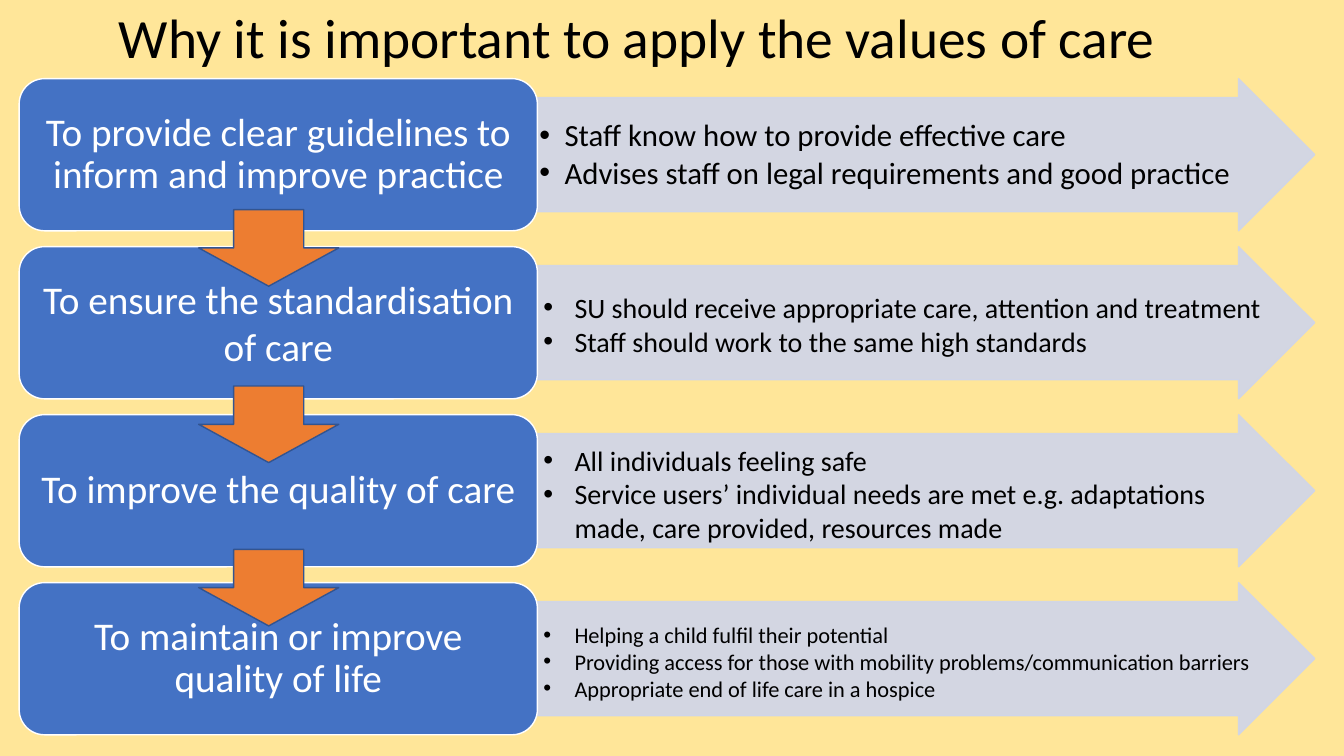
"""Builds a slide on why the values of care should be applied."""
import pptx
import pptx.dml.color
import pptx.enum.shapes
import pptx.enum.text
import pptx.oxml
import pptx.oxml.ns
import pptx.util
from pptx.util import Inches

TITLE = "Why it is important to apply the values of care"

REASONS = [
    {"label": "To provide clear guidelines to inform and improve practice",
     "label_spacing": 0.9,
     "facts": ["Staff know how to provide effective care",
               "Advises staff on legal requirements and good practice"],
     "at": (5.33, 0.97, 7.14, 1.14), "size": 22, "indent": 0.25,
     "insets": (0.02, 0.02), "spacing": 0.9, "after": 3.3},
    {"label": "To ensure the standardisation of care",
     "label_spacing": 1.0,
     "facts": ["SU should receive appropriate care, attention and treatment",
               "Staff should work to the same high standards"],
     "at": (5.29, 2.83, 7.4, 0.77), "size": 20},
    {"label": "To improve the quality of care",
     "label_spacing": 0.9,
     "facts": ["All individuals feeling safe",
               "Service users’ individual needs are met e.g. adaptations made, "
               "care provided, resources made"],
     "at": (5.29, 4.34, 7.4, 1.11), "size": 20},
    {"label": "To maintain or improve quality of life",
     "label_spacing": 0.9,
     "facts": ["Helping a child fulfil their potential",
               "Providing access for those with mobility problems/communication barriers",
               "Appropriate end of life care in a hospice"],
     "at": (5.29, 6.09, 7.4, 0.94), "size": 16},
]

STEP_ARROW_TOPS = [2.08, 3.83, 5.45]

THEME = {
    "font": "Calibri", "title_size": 39.6, "label_size": 28,
    "background": "FFE699", "text": "000000", "label_text": "FFFFFF",
    "label": "4472C4", "label_line": "FFFFFF", "band": "CFD5EA",
    "step": "ED7D31", "step_line": "325491", "band_opacity": 90,
}

ROW_TOP, ROW_PITCH, ROW_HEIGHT = 0.78, 5 / 3, 1.51
LABEL_LEFT, LABEL_WIDTH, BAND_WIDTH = 0.19, 5.14, 7.71
BAND_LEFT = LABEL_LEFT + LABEL_WIDTH

SHAPES = pptx.enum.shapes.MSO_SHAPE
ALIGN = pptx.enum.text.PP_ALIGN
ANCHOR = pptx.enum.text.MSO_ANCHOR


def color(name):
    return pptx.dml.color.RGBColor.from_string(THEME[name])


def add_block(page, kind, at, fill, line):
    block = page.shapes.add_shape(kind, *map(Inches, at))
    block.shadow.inherit = False
    block.fill.solid()
    block.fill.fore_color.rgb = color(fill)
    block.line.color.rgb = color(line)
    block.line.width = pptx.util.Pt(1)
    return block


def set_opacity(block, percent):
    for rgb in block.element.spPr.iter(pptx.oxml.ns.qn("a:srgbClr")):
        alpha = pptx.oxml.parse_xml(
            f'<a:alpha {pptx.oxml.ns.nsdecls("a")} val="{percent * 1000}"/>')
        rgb.append(alpha)


def set_bullet(para, indent):
    properties = para._p.get_or_add_pPr()
    properties.set("marL", str(Inches(indent)))
    properties.set("indent", str(-Inches(indent)))
    for tag, attribute, value in (("buFont", "typeface", "Arial"), ("buChar", "char", "•")):
        properties.append(pptx.oxml.parse_xml(
            f'<a:{tag} {pptx.oxml.ns.nsdecls("a")} {attribute}="{value}"/>'))


def write(box, lines, size, ink, align=ALIGN.LEFT, insets=(0.1, 0.05),
          spacing=1.0, after=0, indent=None, anchor=ANCHOR.MIDDLE):
    frame = box.text_frame
    frame.word_wrap = True
    frame.vertical_anchor = anchor
    frame.margin_left = frame.margin_right = Inches(insets[0])
    frame.margin_top = frame.margin_bottom = Inches(insets[1])
    for index, line in enumerate(lines):
        para = frame.paragraphs[0] if index == 0 else frame.add_paragraph()
        para.alignment = align
        para.line_spacing = spacing
        para.space_after = pptx.util.Pt(after)
        if indent:
            set_bullet(para, indent)
        span = para.add_run()
        span.text = line
        span.font.name = THEME["font"]
        span.font.size = pptx.util.Pt(size)
        span.font.color.rgb = color(ink)


def add_reason(page, index, reason):
    top = ROW_TOP + index * ROW_PITCH
    band = add_block(page, SHAPES.RIGHT_ARROW,
                     (BAND_LEFT, top, BAND_WIDTH, ROW_HEIGHT), "band", "band")
    band.adjustments[0] = 0.75
    band.adjustments[1] = 0.5
    set_opacity(band, THEME["band_opacity"])

    label = add_block(page, SHAPES.ROUNDED_RECTANGLE,
                      (LABEL_LEFT, top, LABEL_WIDTH, ROW_HEIGHT), "label", "label_line")
    write(label, [reason["label"]], THEME["label_size"], "label_text", ALIGN.CENTER,
          insets=(0.12, 0.06), spacing=reason["label_spacing"])

    facts = page.shapes.add_textbox(*map(Inches, reason["at"]))
    write(facts, reason["facts"], reason["size"], "text",
          insets=reason.get("insets", (0.1, 0.05)),
          spacing=reason.get("spacing", 1.0), after=reason.get("after", 0),
          indent=reason.get("indent", 0.31))


def main():
    deck = pptx.Presentation()
    deck.slide_width, deck.slide_height = Inches(13.33), Inches(7.5)
    page = deck.slides.add_slide(deck.slide_layouts[6])
    page.background.fill.solid()
    page.background.fill.fore_color.rgb = color("background")

    title = page.shapes.add_textbox(*map(Inches, (1.08, 0.21, 11.5, 0.39)))
    write(title, [TITLE], THEME["title_size"], "text", spacing=0.9)
    for index, reason in enumerate(REASONS):
        add_reason(page, index, reason)
    for top in STEP_ARROW_TOPS:
        add_block(page, SHAPES.DOWN_ARROW, (1.97, top, 1.39, 0.76), "step", "step_line")
    deck.save("out.pptx")


if __name__ == "__main__":
    main()
